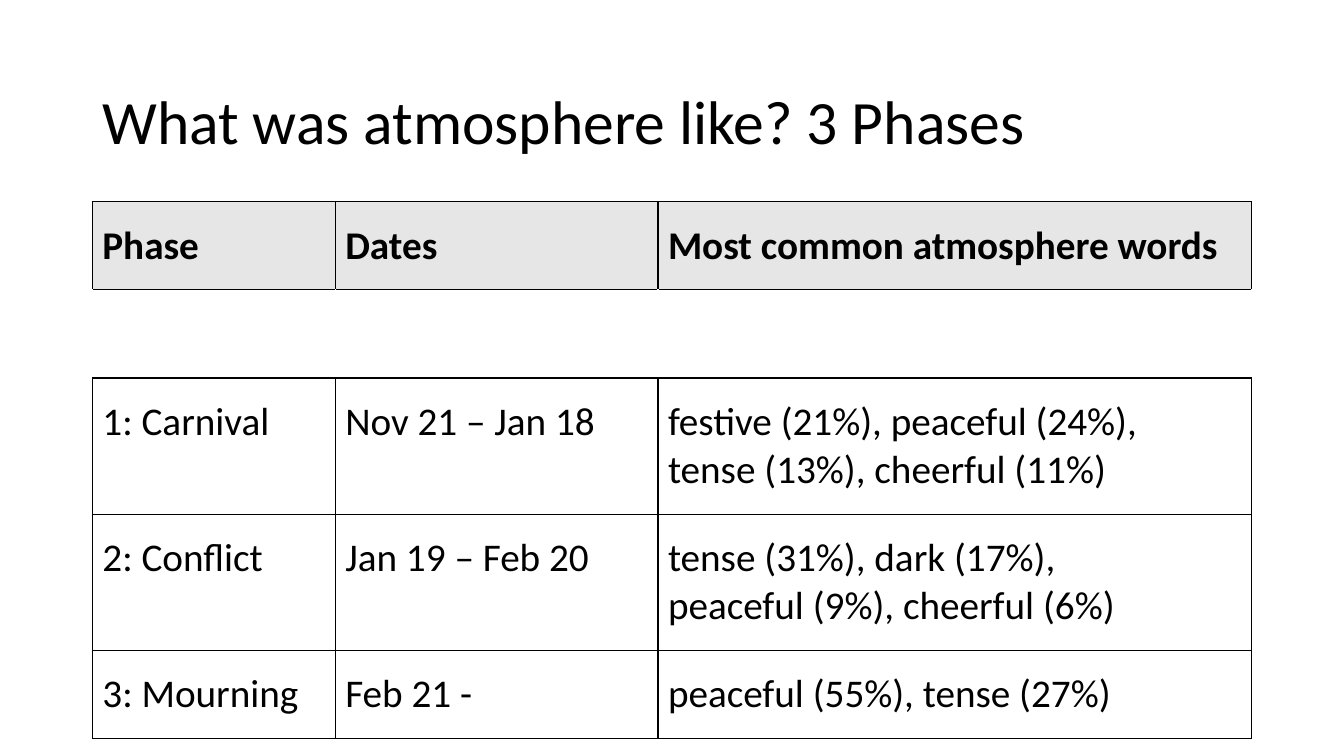
from pptx import Presentation
from pptx.dml.color import RGBColor as RGB
from pptx.enum.text import MSO_ANCHOR as Anchor
from pptx.oxml import parse_xml
from pptx.oxml.ns import nsdecls
from pptx.util import Pt

COLORS = {"ink": "000000", "paper": "FFFFFF", "head": "E7E6E6"}


def write(frame, text, size=28, bold=False, anchor=Anchor.TOP, gap=1.0,
          side=7.2, edge=14.4):
    frame.word_wrap = True
    frame.vertical_anchor = anchor
    frame.margin_left = frame.margin_right = Pt(side)
    frame.margin_top = frame.margin_bottom = Pt(edge)
    frame.text = text
    for para in frame.paragraphs:
        para.line_spacing = gap
        font = para.font
        for run in para.runs:
            font = run.font
            font.name = "Calibri"
            font.size = Pt(size)
            font.bold = bold
            font.color.rgb = RGB.from_string(COLORS["ink"])


def border(cell, sides):
    for spot, (side, color) in enumerate(sides.items()):
        line = parse_xml(
            f'<a:ln{side} {nsdecls("a")} w="{Pt(1)}"><a:solidFill>'
            f'<a:srgbClr val="{COLORS[color]}"/></a:solidFill></a:ln{side}>')
        cell._tc.get_or_add_tcPr().insert(spot, line)


deck = Presentation()
deck.slide_width, deck.slide_height = Pt(960), Pt(540)
slide = deck.slides.add_slide(deck.slide_layouts[6])

title = slide.shapes.add_textbox(Pt(66), Pt(28.8), Pt(828), Pt(120))
write(title.text_frame, "What was atmosphere like? 3 Phases", size=44,
      anchor=Anchor.MIDDLE, gap=0.9, edge=3.6)

ROWS = [
    ("Phase", "Dates", "Most common atmosphere words"),
    ("", "", ""),
    ("1: Carnival", "Nov 21 – Jan 18",
     "festive (21%), peaceful (24%),\ntense (13%), cheerful (11%)"),
    ("2: Conflict", "Jan 19 – Feb 20",
     "tense (31%), dark (17%),\npeaceful (9%), cheerful (6%)"),
    ("3: Mourning", "Feb 21 -", "peaceful (55%), tense (27%)"),
]
WIDTHS = [173.5, 230.5, 424]
HEIGHTS = [63, 63, 97.3, 97.3, 63]

table = slide.shapes.add_table(len(ROWS), len(WIDTHS), Pt(66), Pt(144),
                               Pt(sum(WIDTHS)), Pt(sum(HEIGHTS))).table
table.first_row = table.horz_banding = False
for col, width in zip(table.columns, WIDTHS):
    col.width = Pt(width)

for r, (words, height) in enumerate(zip(ROWS, HEIGHTS)):
    table.rows[r].height = Pt(height)
    rule = "ink" if words[0] else "paper"
    for c, text in enumerate(words):
        cell = table.cell(r, c)
        if text:
            write(cell.text_frame, text, bold=r == 0)
            cell.margin_left = cell.margin_right = Pt(7.2)
            cell.margin_top = cell.margin_bottom = Pt(14.4)
        cell.fill.solid()
        cell.fill.fore_color.rgb = RGB.from_string(
            COLORS["paper" if r else "head"])
        border(cell, {"L": rule, "R": rule, "T": "ink", "B": "ink"})

deck.save("out.pptx")
